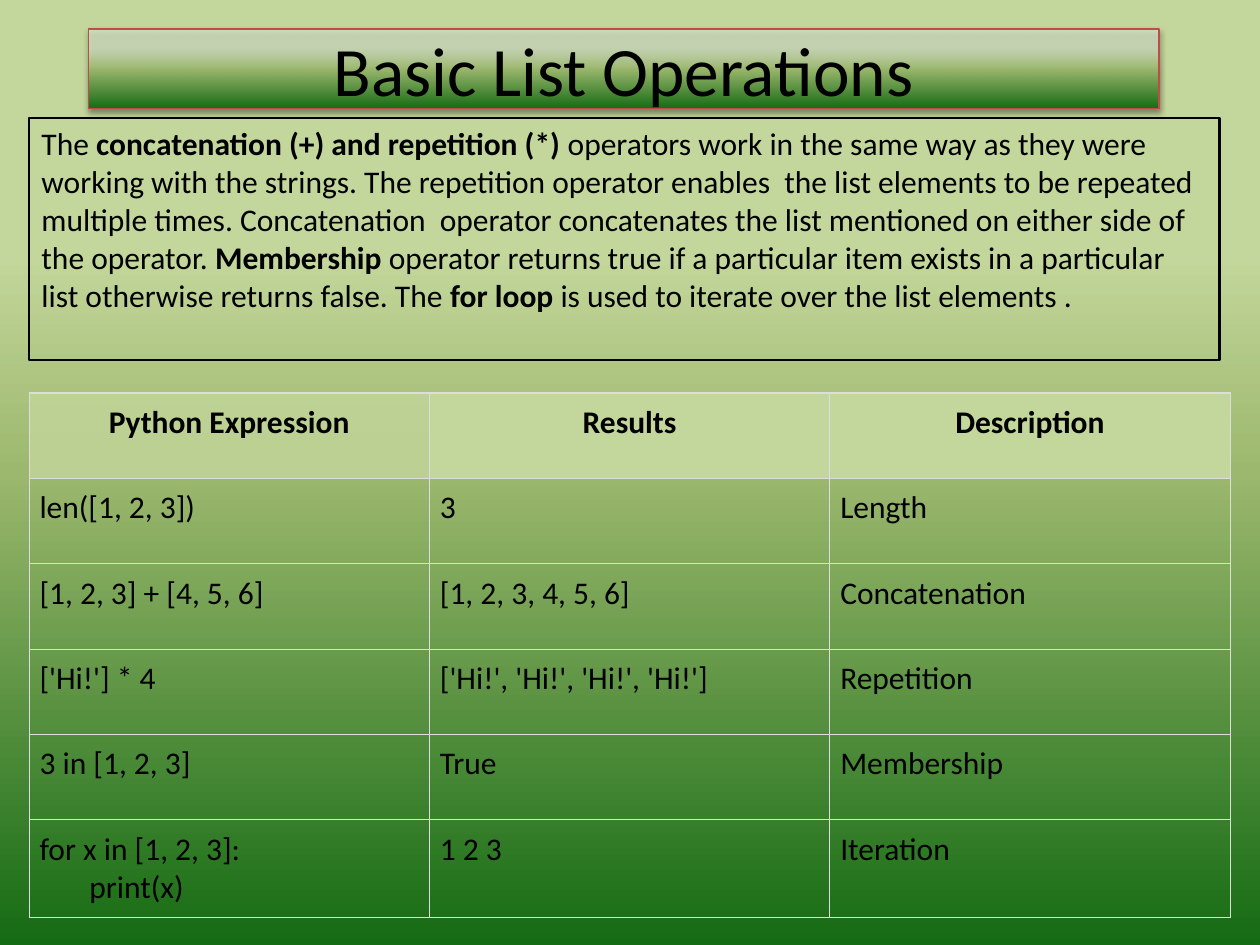
from dataclasses import dataclass

import pptx
import pptx.dml.color
import pptx.enum.shapes
import pptx.enum.text
import pptx.oxml.ns
import pptx.oxml.xmlchemy
import pptx.util
from lxml import etree

Pt = pptx.util.Pt
qn = pptx.oxml.ns.qn


@dataclass(frozen=True)
class Theme:
    font: str = "Calibri"
    title_size: float = 39.6
    body_size: float = 18
    ink: str = "000000"
    header: str = "C3D69B"
    title_border: str = "BF4C48"
    grid: str = "DDDDDD"
    page_stops: tuple = ((27, "C3D69B", 100), (50, "9CB86E", 100), (100, "156B13", 100))
    title_stops: tuple = ((24, "DDEBCF", 67), (50, "9CB86E", 100), (100, "156B13", 100))


THEME = Theme()

EXPLANATION = (
    ("The ", False),
    ("concatenation (+) and repetition (*) ", True),
    ("operators work in the same way as they were working with the strings. "
     "The repetition operator enables  the list elements to be repeated multiple times. "
     "Concatenation  operator concatenates the list mentioned on either side of the operator. ", False),
    ("Membership ", True),
    ("operator returns true if a particular item exists in a particular list "
     "otherwise returns false. The ", False),
    ("for loop ", True),
    ("is used to iterate over the list elements .", False),
)

OPERATIONS = (
    ("Python Expression", "Results", "Description"),
    ("len([1, 2, 3])", "3", "Length"),
    ("[1, 2, 3] + [4, 5, 6]", "[1, 2, 3, 4, 5, 6]", "Concatenation"),
    ("['Hi!'] * 4", "['Hi!', 'Hi!', 'Hi!', 'Hi!']", "Repetition"),
    ("3 in [1, 2, 3]", "True", "Membership"),
    ("for x in [1, 2, 3]:\nprint(x)", "1 2 3", "Iteration"),
)


def rgb(color):
    return pptx.dml.color.RGBColor.from_string(color)


def add_color(parent, color, opacity=100):
    srgb = etree.SubElement(parent, qn("a:srgbClr"), val=color)
    if opacity < 100:
        etree.SubElement(srgb, qn("a:alpha"), val=str(opacity * 1000))


def apply_gradient(fill, owner, stops):
    fill.gradient()
    fill.gradient_angle = 270
    stop_list = owner.find(".//" + qn("a:gsLst"))
    for default_stop in list(stop_list):
        stop_list.remove(default_stop)
    for position, color, opacity in stops:
        stop = etree.SubElement(stop_list, qn("a:gs"), pos=str(position * 1000))
        add_color(stop, color, opacity)


def style_run(run, size, bold=False):
    run.font.name = THEME.font
    run.font.size = Pt(size)
    run.font.bold = bold
    run.font.color.rgb = rgb(THEME.ink)


def add_box(slide, left, top, width, height, border, weight):
    box = slide.shapes.add_shape(
        pptx.enum.shapes.MSO_SHAPE.RECTANGLE, Pt(left), Pt(top), Pt(width), Pt(height))
    box.fill.background()
    box.line.color.rgb = rgb(border)
    box.line.width = Pt(weight)
    box.shadow.inherit = False
    box.text_frame.word_wrap = True
    return box


def add_title(slide, text):
    banner = add_box(slide, 50.4, 16.6, 612, 45.4, THEME.title_border, 0.75)
    apply_gradient(banner.fill, banner.element, THEME.title_stops)
    effects = banner.element.find(".//" + qn("a:effectLst"))
    shadow = etree.SubElement(
        effects, qn("a:outerShdw"), blurRad=str(Pt(3.1)), dist=str(Pt(1.6)),
        dir="5400000", rotWithShape="0")
    add_color(shadow, THEME.ink, 38)
    frame = banner.text_frame
    frame.text = text
    frame.vertical_anchor = pptx.enum.text.MSO_ANCHOR.MIDDLE
    frame.paragraphs[0].alignment = pptx.enum.text.PP_ALIGN.CENTER
    style_run(frame.paragraphs[0].runs[0], THEME.title_size)


def add_explanation(slide, phrases):
    frame = add_box(slide, 16.6, 67.5, 680.4, 138.2, THEME.ink, 1.5).text_frame
    frame.vertical_anchor = pptx.enum.text.MSO_ANCHOR.TOP
    paragraph = frame.paragraphs[0]
    paragraph.alignment = pptx.enum.text.PP_ALIGN.LEFT
    for phrase, bold in phrases:
        run = paragraph.add_run()
        run.text = phrase
        style_run(run, THEME.body_size, bold)


def add_cell_borders(cell):
    properties = cell._tc.get_or_add_tcPr()
    for index, side in enumerate(("lnL", "lnR", "lnT", "lnB")):
        border = etree.Element(qn("a:" + side), w=str(Pt(0.75)))
        add_color(etree.SubElement(border, qn("a:solidFill")), THEME.grid)
        properties.insert(index, border)


def fill_cell(cell, text, is_header):
    cell.margin_left = cell.margin_right = cell.margin_top = cell.margin_bottom = Pt(6)
    cell.text_frame.text = text
    for line, paragraph in enumerate(cell.text_frame.paragraphs):
        if is_header:
            paragraph.alignment = pptx.enum.text.PP_ALIGN.CENTER
        if line > 0:
            properties = paragraph._p.get_or_add_pPr()
            properties.set("marL", str(Pt(28.5)))
            properties.set("indent", "0")
        for run in paragraph.runs:
            style_run(run, THEME.body_size, is_header)
    if is_header:
        cell.fill.solid()
        cell.fill.fore_color.rgb = rgb(THEME.header)
    else:
        cell.fill.background()
    add_cell_borders(cell)


def add_operations_table(slide, rows):
    column_width, row_height = 228.8, 48.8
    columns = len(rows[0])
    table = slide.shapes.add_table(
        len(rows), columns, Pt(16.6), Pt(224.6),
        Pt(column_width * columns), Pt(row_height * len(rows))).table
    for column in table.columns:
        column.width = Pt(column_width)
    for row_index, row in enumerate(rows):
        table.rows[row_index].height = Pt(row_height)
        for column_index, text in enumerate(row):
            fill_cell(table.cell(row_index, column_index), text, row_index == 0)
    first_header = table.cell(0, 0)._tc.tcPr.find(qn("a:solidFill"))
    etree.SubElement(first_header[0], qn("a:alpha"), val="80000")


def main():
    presentation = pptx.Presentation()
    presentation.slide_width = Pt(720)
    presentation.slide_height = Pt(540)
    slide = presentation.slides.add_slide(presentation.slide_layouts[6])
    apply_gradient(slide.background.fill, slide.element, THEME.page_stops)
    add_title(slide, "Basic List Operations")
    add_operations_table(slide, OPERATIONS)
    add_explanation(slide, EXPLANATION)
    presentation.save("out.pptx")


if __name__ == "__main__":
    main()
